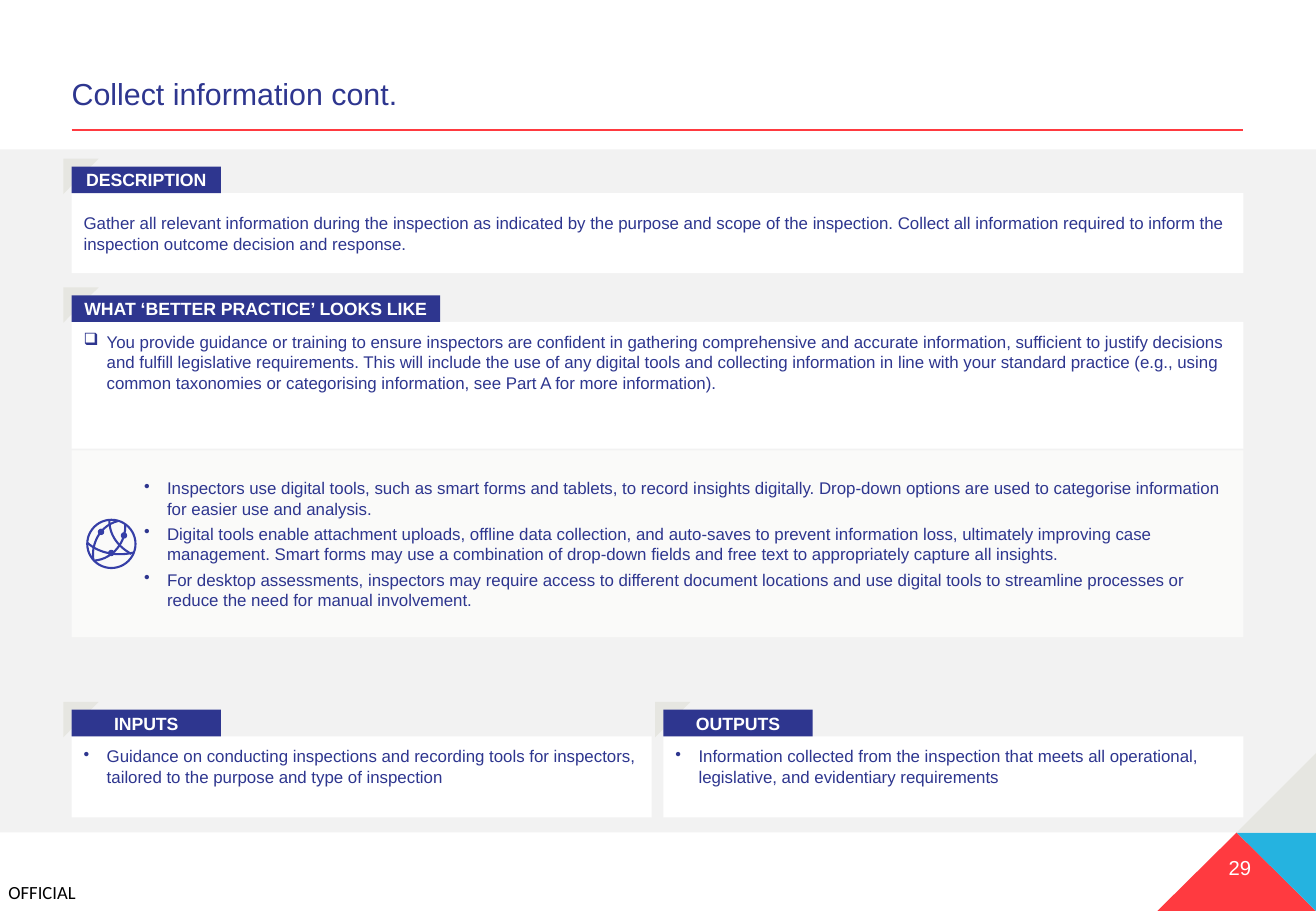
import pptx
import pptx.util
import pptx.dml.color
import pptx.enum.shapes
import pptx.enum.text
import pptx.oxml
import pptx.oxml.ns

Pt = pptx.util.Pt
SHAPE = pptx.enum.shapes.MSO_SHAPE
ALIGN = pptx.enum.text.PP_ALIGN
ANCHOR = pptx.enum.text.MSO_ANCHOR
COLORS = {
    "navy": "2E368F", "icon": "363FA7", "red": "FF3A40", "cyan": "25B3E0",
    "stone": "E6E6E1", "band": "F2F2F2", "digital": "FAFAF9",
    "white": "FFFFFF", "black": "000000",
}
RGB = {name: pptx.dml.color.RGBColor.from_string(value) for name, value in COLORS.items()}

deck = pptx.Presentation()
deck.slide_width, deck.slide_height = Pt(780), Pt(540)
shapes = deck.slides.add_slide(deck.slide_layouts[6]).shapes


def paint(shape, fill=None, line=None):
    shape.shadow.inherit = False
    if fill:
        shape.fill.solid()
        shape.fill.fore_color.rgb = RGB[fill]
    else:
        shape.fill.background()
    if line:
        shape.line.color.rgb = RGB[line]
        shape.line.width = Pt(1.25)
    else:
        shape.line.fill.background()
    return shape


def write(shape, lines, size, color="navy", font="Arial", bold=False, align=ALIGN.LEFT,
          anchor=ANCHOR.TOP, inset=(7.2, 3.6), bullet=None, indent=13.7, after=0, wrap=True):
    frame = shape.text_frame
    frame.word_wrap = wrap
    frame.vertical_anchor = anchor
    frame.margin_left = frame.margin_right = Pt(inset[0])
    frame.margin_top = frame.margin_bottom = Pt(inset[1])
    frame.text = "\n".join(lines)
    for paragraph in frame.paragraphs:
        paragraph.alignment = align
        paragraph.space_after = Pt(after)
        if bullet:
            props = paragraph._p.get_or_add_pPr()
            props.set("marL", str(Pt(indent)))
            props.set("indent", str(-Pt(13.7)))
            mark = pptx.oxml.parse_xml(
                f'<a:buChar {pptx.oxml.ns.nsdecls("a")} char="{bullet}"/>')
            props.append(mark)
        for run in paragraph.runs:
            run.font.size, run.font.name, run.font.bold = Pt(size), font, bold
            run.font.color.rgb = RGB[color]


left, width = 42.5, 694.5
right = left + width

paint(shapes.add_shape(SHAPE.RECTANGLE, 0, Pt(88.5), Pt(780), Pt(405)), "band")

corners = [
    ("red", [(733, 493.5), (686, 540), (780, 540)]),
    ("cyan", [(780, 493.5), (733, 493.5), (780, 540)]),
    ("stone", [(780, 446.5), (733, 493.5), (780, 493.5)]),
]
for color, points in corners:
    vertices = [(Pt(x), Pt(y)) for x, y in points]
    corner = shapes.build_freeform(*vertices[0])
    corner.add_line_segments(vertices[1:], close=True)
    paint(corner.convert_to_shape(), color)

marking = shapes.add_textbox(Pt(5), Pt(522), Pt(42.5), Pt(13))
write(marking, ["OFFICIAL"], 11, "black", "Calibri", inset=(0, 0), wrap=False)
page_number = shapes.add_textbox(Pt(679), Pt(503.3), Pt(62.5), Pt(21.6))
write(page_number, ["29"], 12, "white", align=ALIGN.RIGHT, inset=(0, 3.6))

title = shapes.add_textbox(Pt(left), Pt(42.5), Pt(width), Pt(27.4))
write(title, ["Collect information cont."], 18, anchor=ANCHOR.BOTTOM, inset=(0, 3.6))
title.text_frame.paragraphs[0].line_spacing = 0.9
title_rule = shapes.add_connector(
    pptx.enum.shapes.MSO_CONNECTOR.STRAIGHT, Pt(left), Pt(77), Pt(right), Pt(77))
title_rule.line.color.rgb = RGB["red"]
title_rule.line.width = Pt(1.25)
title_rule._element.spPr.append(
    pptx.oxml.parse_xml(f'<a:effectLst {pptx.oxml.ns.nsdecls("a")}/>'))

half = 343.75
listed = {"inset": (7.2, 5.76), "after": 3}
sections = [
    ("DESCRIPTION", left, 114.5, width, 47.5, 88.5,
     "Gather all relevant information during the inspection as indicated by the purpose and "
     "scope of the inspection. Collect all information required to inform the inspection "
     "outcome decision and response.",
     {"anchor": ANCHOR.MIDDLE, "after": 3}),
    ("WHAT ‘BETTER PRACTICE’ LOOKS LIKE", left, 190.8, width, 75.2, 218.5,
     "You provide guidance or training to ensure inspectors are confident in gathering "
     "comprehensive and accurate information, sufficient to justify decisions and fulfill "
     "legislative requirements. This will include the use of any digital tools and collecting "
     "information in line with your standard practice (e.g., using common taxonomies or "
     "categorising information, see Part A for more information).",
     {**listed, "bullet": "❑"}),
    ("INPUTS", left, 436.5, half, 48, 88.5,
     "Guidance on conducting inspections and recording tools for inspectors, tailored to the "
     "purpose and type of inspection",
     {**listed, "bullet": "•"}),
    ("OUTPUTS", right - half, 436.5, half, 48, 88.5,
     "Information collected from the inspection that meets all operational, legislative, and "
     "evidentiary requirements",
     {**listed, "bullet": "•"}),
]
for heading, x, y, box_width, box_height, tag_width, body, style in sections:
    panel = shapes.add_shape(SHAPE.RECTANGLE, Pt(x), Pt(y), Pt(box_width), Pt(box_height))
    write(paint(panel, "white"), [body], 10, **style)
    fold = shapes.add_shape(SHAPE.HALF_FRAME, Pt(x - 5), Pt(y - 20.5), Pt(21), Pt(21))
    fold.adjustments[0] = fold.adjustments[1] = 0.238
    paint(fold, "stone")
    tag = shapes.add_shape(SHAPE.RECTANGLE, Pt(x), Pt(y - 15.8), Pt(tag_width), Pt(15.8))
    write(paint(tag, "navy"), [heading], 10.5, "white", bold=True,
          align=ALIGN.CENTER, anchor=ANCHOR.MIDDLE)

digital_practices = [
    "Inspectors use digital tools, such as smart forms and tablets, to record insights "
    "digitally. Drop-down options are used to categorise information for easier use and "
    "analysis.",
    "Digital tools enable attachment uploads, offline data collection, and auto-saves to "
    "prevent information loss, ultimately improving case management. Smart forms may use a "
    "combination of drop-down fields and free text to appropriately capture all insights.",
    "For desktop assessments, inspectors may require access to different document locations "
    "and use digital tools to streamline processes or reduce the need for manual involvement.",
]
digital = shapes.add_shape(SHAPE.RECTANGLE, Pt(left), Pt(267), Pt(width), Pt(110.7))
write(paint(digital, "digital"), digital_practices, 10, anchor=ANCHOR.MIDDLE,
      bullet="•", indent=49.5, **listed)

globe = shapes.add_shape(SHAPE.OVAL, Pt(51.7), Pt(308.1), Pt(28.6), Pt(28.6))
paint(globe, line="icon")
globe_arcs = [
    [(64.8, 308.2), (64.8, 317), (69.8, 324), (77.8, 328.3)],
    [(51.8, 321.8), (59, 328.3), (69.8, 329.8), (79.2, 327.6)],
    [(69.8, 308.9), (59, 311.8), (54, 322.6), (55.4, 331.9)],
    [(74.2, 311), (74.9, 320.4), (67.7, 331.2), (56.2, 332.3)],
]
steps = 16
for a, b, c, d in globe_arcs:
    curve = []
    for step in range(steps + 1):
        t = step / steps
        weights = ((1 - t) ** 3, 3 * t * (1 - t) ** 2, 3 * t * t * (1 - t), t ** 3)
        curve.append([Pt(sum(w * p[axis] for w, p in zip(weights, (a, b, c, d))))
                      for axis in (0, 1)])
    arc = shapes.build_freeform(*curve[0])
    arc.add_line_segments(curve[1:], close=False)
    paint(arc.convert_to_shape(), line="icon")
for x, y in [(59.9, 315.3), (73.5, 317.4), (66, 327.8)]:
    paint(shapes.add_shape(SHAPE.OVAL, Pt(x - 1.9), Pt(y - 1.9), Pt(3.8), Pt(3.8)), "icon")

deck.save("out.pptx")
